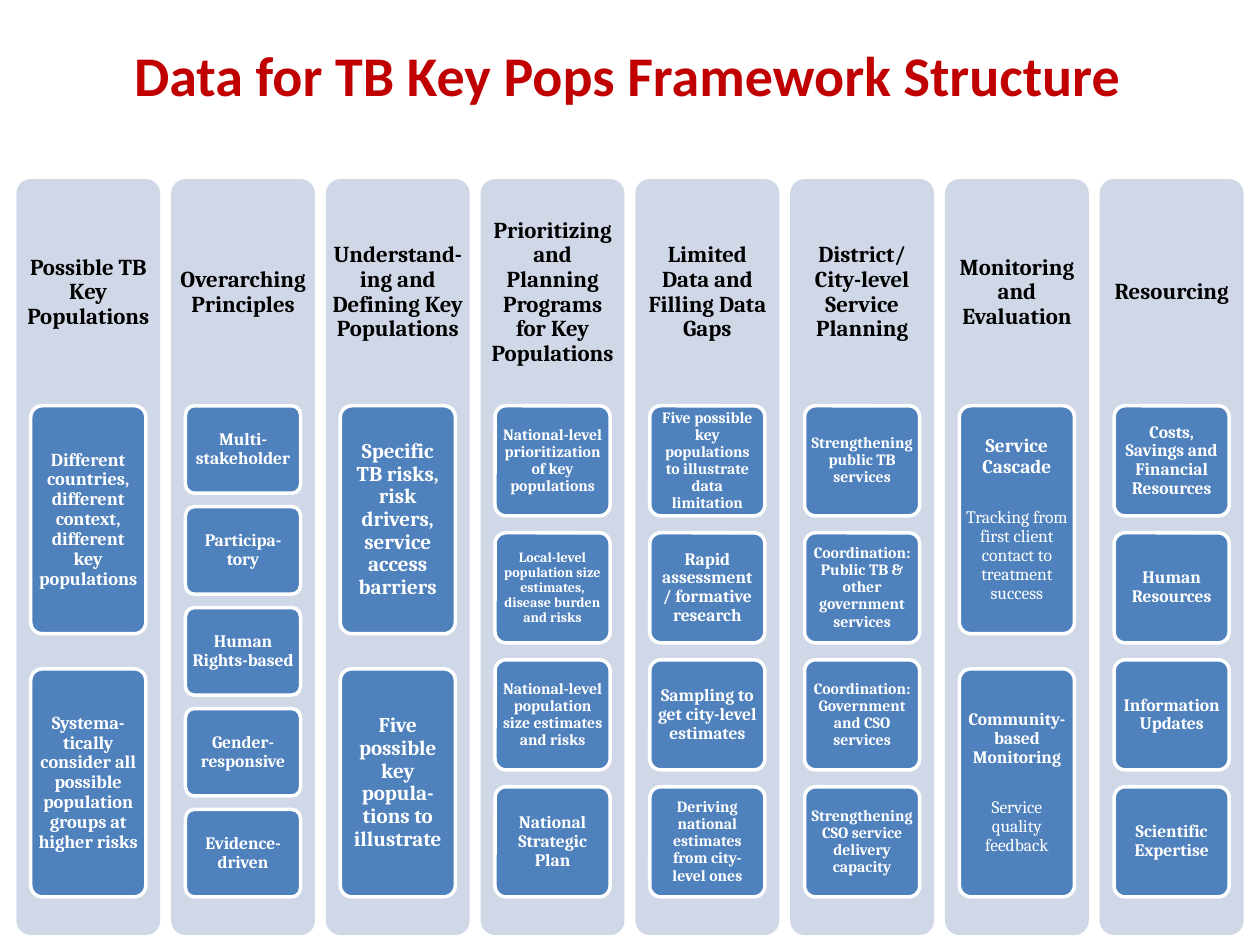
"""Build the Data for TB Key Pops framework slide."""
import dataclasses

import pptx
import pptx.dml.color
import pptx.enum.shapes
import pptx.enum.text
import pptx.util

Cm = pptx.util.Cm
Pt = pptx.util.Pt
Color = pptx.dml.color.RGBColor.from_string


@dataclasses.dataclass(frozen=True)
class Theme:
    """Colours, fonts and type sizes of the slide."""
    title: str = "C00000"
    heading: str = "000000"
    panel: str = "D0D8E8"
    box: str = "4F81BD"
    white: str = "FFFFFF"
    title_font: str = "Calibri"
    body_font: str = "Cambria"
    title_size: float = 32
    heading_size: float = 13
    large: float = 12
    lead: float = 11
    medium: float = 10.5
    normal: float = 10
    small: float = 9
    tiny: float = 8


THEME = Theme()

PANEL_LEFT, PANEL_TOP, PANEL_WIDTH, PANEL_HEIGHT = 0.33, 3.61, 2.9, 15.24
PANEL_STEP = 3.12
HEADING_HEIGHT = 4.57
BOX_INDENT, BOX_WIDTH = 0.29, 2.32
STACK_TOP, STACK_HEIGHT = 8.18, 9.9
GAP_RATIO = 0.154
DETAIL_GAP = 18

COLUMNS = [
    ("Possible TB Key Populations", [
        ("Different countries, different context, different key populations", THEME.medium),
        ("Systema-tically consider all possible population groups at higher risks", THEME.medium),
    ]),
    ("Overarching Principles", [
        ("Multi-stakeholder", THEME.normal),
        ("Participa-tory", THEME.normal),
        ("Human Rights-based", THEME.normal),
        ("Gender-responsive", THEME.normal),
        ("Evidence-driven", THEME.normal),
    ]),
    ("Understand-ing and Defining Key Populations", [
        ("Specific TB risks, risk drivers, service access barriers", THEME.large),
        ("Five possible key popula-tions to illustrate", THEME.large),
    ]),
    ("Prioritizing and Planning Programs for Key Populations", [
        ("National-level prioritization of key populations", THEME.small),
        ("Local-level population size estimates, disease burden and risks", THEME.tiny),
        ("National-level population size estimates and risks", THEME.small),
        ("National Strategic Plan", THEME.normal),
    ]),
    ("Limited Data and Filling Data Gaps", [
        ("Five possible key populations to illustrate data limitation", THEME.small),
        ("Rapid assessment / formative research", THEME.normal),
        ("Sampling to get city-level estimates", THEME.normal),
        ("Deriving national estimates from city-level ones", THEME.small),
    ]),
    ("District/City-level Service Planning", [
        ("Strengthening public TB services", THEME.small),
        ("Coordination: Public TB & other government services", THEME.small),
        ("Coordination: Government and CSO services", THEME.small),
        ("Strengthening CSO service delivery capacity", THEME.small),
    ]),
    ("Monitoring and Evaluation", [
        ("Service Cascade", THEME.lead,
         "Tracking from first client contact to treatment success"),
        ("Community-based Monitoring", THEME.normal, "Service quality feedback"),
    ]),
    ("Resourcing", [
        ("Costs, Savings and Financial Resources", THEME.normal),
        ("Human Resources", THEME.normal),
        ("Information Updates", THEME.normal),
        ("Scientific Expertise", THEME.normal),
    ]),
]


def style_paragraph(paragraph, text, size, color, bold=True, font=THEME.body_font):
    """Write centred text into a paragraph."""
    paragraph.text = text
    paragraph.alignment = pptx.enum.text.PP_ALIGN.CENTER
    paragraph.font.name = font
    paragraph.font.size = Pt(size)
    paragraph.font.bold = bold
    paragraph.font.color.rgb = Color(color)


def prepare_frame(shape, side, end):
    """Set wrapping, middle anchor and margins, and return the text frame."""
    frame = shape.text_frame
    frame.word_wrap = True
    frame.vertical_anchor = pptx.enum.text.MSO_ANCHOR.MIDDLE
    frame.margin_left = frame.margin_right = Cm(side)
    frame.margin_top = frame.margin_bottom = Cm(end)
    return frame


def add_rounded(slide, left, top, width, height, fill):
    """Add a flat rounded rectangle without an outline."""
    shape = slide.shapes.add_shape(
        pptx.enum.shapes.MSO_SHAPE.ROUNDED_RECTANGLE,
        Cm(left), Cm(top), Cm(width), Cm(height))
    shape.adjustments[0] = 0.1
    shape.shadow.inherit = False
    shape.fill.solid()
    shape.fill.fore_color.rgb = Color(fill)
    shape.line.fill.background()
    return shape


def add_box(slide, left, top, height, text, size, detail=None):
    """Add a white-edged box with bold text and an optional plain detail."""
    shape = add_rounded(slide, left, top, BOX_WIDTH, height, THEME.box)
    shape.line.color.rgb = Color(THEME.white)
    shape.line.width = Pt(2)
    frame = prepare_frame(shape, 0.07, 0.05)
    paragraph = frame.paragraphs[0]
    style_paragraph(paragraph, text, size, THEME.white)
    paragraph.line_spacing = 0.9
    if detail:
        paragraph.space_after = Pt(DETAIL_GAP)
        paragraph = frame.add_paragraph()
        style_paragraph(paragraph, detail, THEME.normal, THEME.white, bold=False)
        paragraph.line_spacing = 0.9


def add_column(slide, left, heading, boxes):
    """Add a panel with its heading and an evenly spaced stack of boxes."""
    add_rounded(slide, left, PANEL_TOP, PANEL_WIDTH, PANEL_HEIGHT, THEME.panel)
    label = slide.shapes.add_textbox(
        Cm(left), Cm(PANEL_TOP), Cm(PANEL_WIDTH), Cm(HEADING_HEIGHT))
    paragraph = prepare_frame(label, 0.13, 0.13).paragraphs[0]
    style_paragraph(paragraph, heading, THEME.heading_size, THEME.heading)
    paragraph.line_spacing = 0.9
    count = len(boxes)
    height = STACK_HEIGHT / (count + (count - 1) * GAP_RATIO)
    for row, box in enumerate(boxes):
        top = STACK_TOP + row * height * (1 + GAP_RATIO)
        add_box(slide, left + BOX_INDENT, top, height, *box)


def set_title(slide, text):
    """Place and format the slide title."""
    title = slide.shapes.title
    title.left, title.top, title.width, title.height = Cm(1.22), Cm(0.41), Cm(22.86), Cm(2.16)
    frame = title.text_frame
    frame.vertical_anchor = pptx.enum.text.MSO_ANCHOR.MIDDLE
    style_paragraph(frame.paragraphs[0], text, THEME.title_size, THEME.title,
                    font=THEME.title_font)


def main():
    """Build and save the presentation."""
    presentation = pptx.Presentation()
    presentation.slide_width, presentation.slide_height = Cm(25.4), Cm(19.05)
    slide = presentation.slides.add_slide(presentation.slide_layouts[5])
    set_title(slide, "Data for TB Key Pops Framework Structure")
    for index, (heading, boxes) in enumerate(COLUMNS):
        add_column(slide, PANEL_LEFT + index * PANEL_STEP, heading, boxes)
    presentation.save("out.pptx")


if __name__ == "__main__":
    main()
